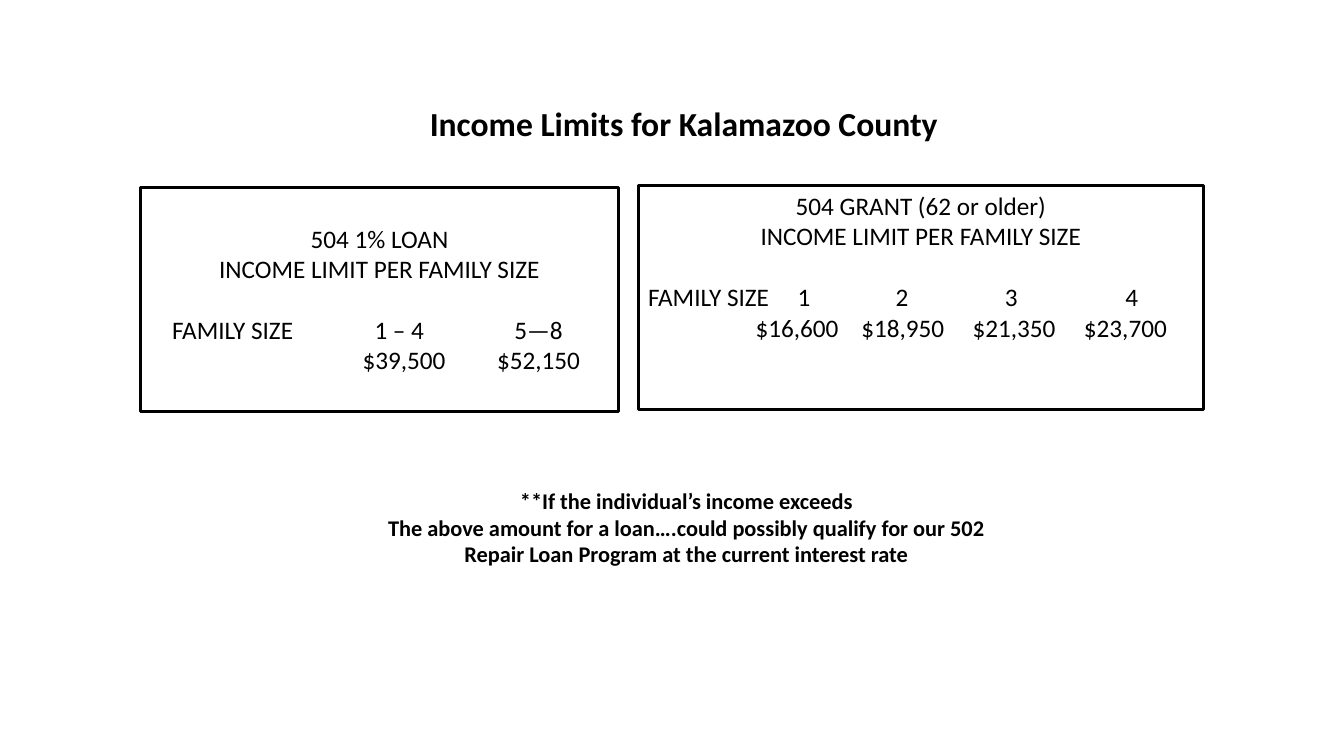
from lxml import etree
from pptx import Presentation
from pptx.dml.color import RGBColor
from pptx.enum.shapes import MSO_SHAPE
from pptx.enum.text import MSO_ANCHOR, PP_ALIGN
from pptx.oxml.ns import qn
from pptx.util import Pt

# Content: box is left, top, width, height in points
TITLE = {"box": (271.4, 70, 434.2, 36), "size": 24,
         "lines": ["Income Limits for Kalamazoo County"]}
NOTE = {"box": (258.5, 344.2, 463.7, 65.5), "size": 16,
        "lines": ["**If the individual’s income exceeds",
                  "The above amount for a loan….could possibly qualify for our 502 "
                  "Repair Loan Program at the current interest rate"]}

# Row cells are (text, column centre from the text edge); None starts at the edge
PROGRAMS = [
    {"box": (100.1, 133.9, 342, 160), "lines_above": 1,
     "heading": ["504 1% LOAN", "INCOME LIMIT PER FAMILY SIZE"],
     "rows": [[("FAMILY SIZE", 59), ("1 – 4", 178), ("5—8", 277.5)],
              [("$39,500", 181.5), ("$52,150", 277.5)]]},
    {"box": (455.8, 132.5, 404, 160), "lines_above": 0,
     "heading": ["504 GRANT (62 or older)", "INCOME LIMIT PER FAMILY SIZE"],
     "rows": [[("FAMILY SIZE", None), ("1", 111.5), ("2", 181.5), ("3", 259.5), ("4", 345.5)],
              [("$16,600", 106.5), ("$18,950", 182), ("$21,350", 261.5), ("$23,700", 341)]]},
]
COLORS = {"ink": "000000"}
FONT = "Calibri"
BODY_SIZE = 18
LINE_HEIGHT = 22
INSET = 3.6
INK = RGBColor.from_string(COLORS["ink"])


def add_line(frame, text, size, bold=False, align=PP_ALIGN.CENTER):
    """Write one paragraph, reusing the empty one a new frame holds."""
    first = frame.paragraphs[0]
    line = frame.add_paragraph() if first.runs else first
    line.alignment = align
    run = line.add_run()
    run.text = text
    run.font.name, run.font.size, run.font.bold = FONT, Pt(size), bold
    run.font.color.rgb = INK
    return line


def add_row(frame, cells):
    """Write a row whose cells are centred on tab stops."""
    text = "".join(("" if centre is None else "\t") + cell for cell, centre in cells)
    row = add_line(frame, text, BODY_SIZE, align=PP_ALIGN.LEFT)
    stops = etree.SubElement(row._p.get_or_add_pPr(), qn("a:tabLst"))
    for _, centre in cells:
        if centre is not None:
            etree.SubElement(stops, qn("a:tab"), pos=str(Pt(centre)), algn="ctr")
    return row


deck = Presentation()
deck.slide_width, deck.slide_height = Pt(960), Pt(540)
slide = deck.slides.add_slide(deck.slide_layouts[6])

# Program boxes
for program in PROGRAMS:
    panel = slide.shapes.add_shape(MSO_SHAPE.RECTANGLE, *map(Pt, program["box"]))
    panel.shadow.inherit = False
    panel.fill.background()
    panel.line.color.rgb = INK
    panel.line.width = Pt(2.25)
    frame = panel.text_frame
    frame.word_wrap = True
    frame.vertical_anchor = MSO_ANCHOR.TOP
    frame.margin_top = Pt(INSET + program["lines_above"] * LINE_HEIGHT)
    for heading in program["heading"]:
        add_line(frame, heading, BODY_SIZE)
    sizes, limits = [add_row(frame, cells) for cells in program["rows"]]
    sizes.space_before = Pt(LINE_HEIGHT)

# Title and note
for caption in (TITLE, NOTE):
    frame = slide.shapes.add_textbox(*map(Pt, caption["box"])).text_frame
    frame.word_wrap = True
    for text in caption["lines"]:
        add_line(frame, text, caption["size"], bold=True)

deck.save("out.pptx")
